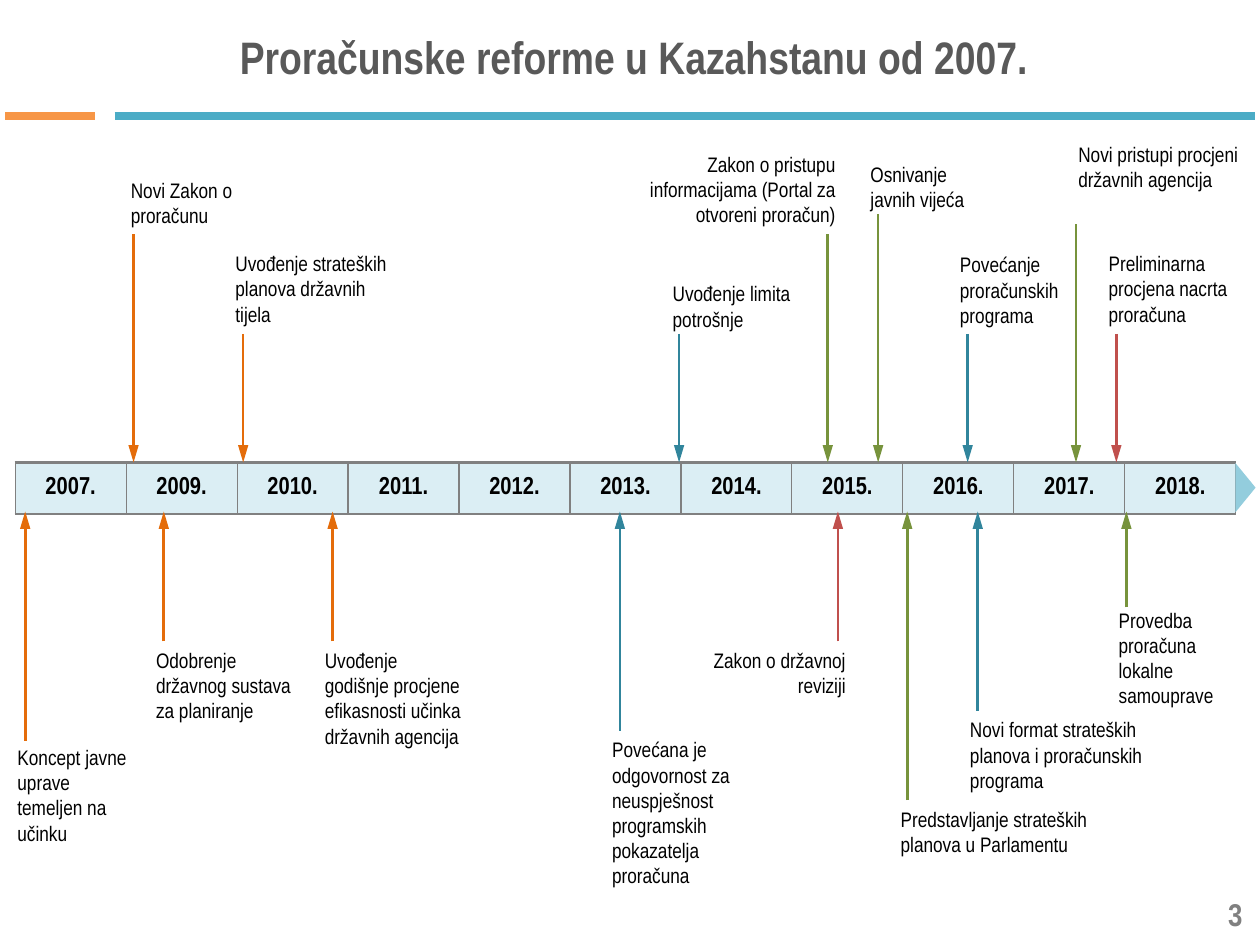
from lxml import etree
from pptx import Presentation
from pptx.dml.color import RGBColor
from pptx.enum.shapes import MSO_CONNECTOR, MSO_SHAPE
from pptx.enum.text import MSO_ANCHOR, PP_ALIGN
from pptx.oxml.ns import qn
from pptx.util import Inches, Pt

FONT = "Arial Narrow"
COLORS = {
    "title": "595959", "gray": "808080", "black": "000000",
    "rule": "4BACC6", "accent": "F79646", "cell": "DBEEF4", "tip": "93CDDD",
    "orange": "E46C0A", "teal": "31859C", "green": "77933C", "red": "C0504D",
}
YEARS = ["2007.", *(f"{year}." for year in range(2009, 2019))]
BAND = (0.12, 3.67, 9.69, 0.41)
ARROW_BOTTOM = 4.06

# Text, text box, arrow x, arrow start, colour (an arrow ends on the band)
EVENTS_ABOVE = [
    ("Novi Zakon o proračunu", (0.94, 1.36, 1.46, 0.5), 1.06, 1.86, "orange"),
    ("Uvođenje strateških planova državnih tijela", (1.77, 1.94, 1.42, 0.71), 1.93, 2.65, "orange"),
    ("Uvođenje limita potrošnje", (5.24, 2.18, 1.42, 0.55), 5.39, 2.65, "teal"),
    ("Zakon o pristupu informacijama (Portal za otvoreni proračun)",
     (5, 1.15, 1.73, 0.71), 6.57, 1.86, "green"),
    ("Osnivanje\njavnih vijeća", (6.81, 1.23, 1.18, 0.47), 6.97, 1.7, "green"),
    ("Povećanje proračunskih programa", (7.52, 1.95, 1.18, 0.7), 7.68, 2.65, "teal"),
    ("Novi pristupi procjeni državnih agencija", (8.46, 1.07, 1.54, 0.69), 8.54, 1.78, "green"),
    ("Preliminarna procjena nacrta proračuna", (8.7, 1.94, 1.18, 0.71), 8.86, 2.65, "red"),
]
EVENTS_BELOW = [
    ("Koncept javne uprave temeljen na učinku", (0.04, 5.86, 1.1, 0.96), 0.2, 5.88, "orange"),
    ("Odobrenje državnog sustava za planiranje", (1.14, 5.09, 1.34, 0.87), 1.3, 5.09, "orange"),
    ("Uvođenje\ngodišnje procjene efikasnosti učinka državnih agencija",
     (2.48, 5.09, 1.73, 0.94), 2.64, 5.09, "orange"),
    ("Povećana je odgovornost za neuspješnost programskih pokazatelja proračuna",
     (4.76, 5.8, 1.5, 1.1), 4.92, 5.8, "teal"),
    ("Zakon o državnoj reviziji", (5.39, 5.09, 1.42, 0.31), 6.65, 5.09, "red"),
    ("Predstavljanje strateških planova u Parlamentu", (7.05, 6.35, 1.73, 0.63), 7.2, 6.35, "green"),
    ("Novi format strateških planova i proračunskih programa",
     (7.6, 5.64, 1.73, 0.71), 7.76, 5.64, "teal"),
    ("Provedba proračuna lokalne samouprave", (8.78, 4.77, 1.22, 0.87), 8.94, 4.82, "green"),
]


def color(name):
    return RGBColor.from_string(COLORS[name])


def inches(box):
    return [Inches(length) for length in box]


def write(frame, text, size=12, bold=False, ink="black", align=PP_ALIGN.LEFT, after=0):
    for index, line in enumerate(text.split("\n")):
        para = frame.add_paragraph() if index else frame.paragraphs[0]
        para.alignment = align
        para.space_after = Pt(after)
        span = para.add_run()
        span.text = line
        span.font.name = FONT
        span.font.size = Pt(size)
        span.font.bold = bold
        span.font.color.rgb = color(ink)


def add_text(page, box, text, anchor=MSO_ANCHOR.TOP, **style):
    frame = page.shapes.add_textbox(*inches(box)).text_frame
    frame.word_wrap = True
    frame.vertical_anchor = anchor
    write(frame, text, **style)


def add_line(page, start, end, ink, width=1.5, arrow=False):
    line = page.shapes.add_connector(MSO_CONNECTOR.STRAIGHT, *inches(start + end))
    line.line.color.rgb = color(ink)
    line.line.width = Pt(width)
    if arrow:
        etree.SubElement(line.line._get_or_add_ln(), qn("a:tailEnd"), type="triangle", len="lg")
    etree.SubElement(line._element.spPr, qn("a:effectLst"))


def add_header(page, box):
    title = page.shapes.title
    title.left, title.top, title.width, title.height = inches(box)
    title.text_frame.vertical_anchor = MSO_ANCHOR.MIDDLE
    write(title.text_frame, "Proračunske reforme u Kazahstanu od 2007.", size=26,
          bold=True, ink="title", align=PP_ALIGN.CENTER, after=6)
    rule_y = box[1] + box[3] + 0.16
    add_line(page, (0.91, rule_y), (9.96, rule_y), "rule", width=4.5)
    add_line(page, (0.04, rule_y), (0.75, rule_y), "accent", width=4.5)


def set_borders(cell):
    properties = cell._tc.get_or_add_tcPr()
    for index, (side, width) in enumerate((("L", 0.75), ("R", 0.75), ("T", 1.5), ("B", 1.5))):
        border = etree.Element(qn(f"a:ln{side}"), w=str(Pt(width)))
        fill = etree.SubElement(border, qn("a:solidFill"))
        etree.SubElement(fill, qn("a:srgbClr"), val=COLORS["gray"])
        properties.insert(index, border)


def add_year_band(page, box):
    left, top, width, height = box
    table = page.shapes.add_table(1, len(YEARS), *inches(box)).table
    table.first_row = table.horz_banding = False
    table.rows[0].height = Inches(height)
    for index, year in enumerate(YEARS):
        table.columns[index].width = Inches(width / len(YEARS))
        cell = table.cell(0, index)
        cell.vertical_anchor = MSO_ANCHOR.MIDDLE
        cell.fill.solid()
        cell.fill.fore_color.rgb = color("cell")
        set_borders(cell)
        write(cell.text_frame, year, size=14, bold=True, align=PP_ALIGN.CENTER)

    # Arrow tip at the right end of the band
    tip = page.shapes.add_shape(MSO_SHAPE.ISOSCELES_TRIANGLE,
                                *inches((left + width - 0.12, top + 0.12, 0.39, 0.16)))
    tip.rotation = 90
    tip.shadow.inherit = False
    tip.fill.solid()
    tip.fill.fore_color.rgb = color("tip")
    tip.line.fill.background()


def add_events(page, events, band_y):
    for text, box, x, start_y, ink in events:
        add_line(page, (x, start_y), (x, band_y), ink, arrow=True)
        # Text that lies mostly left of its arrow is set flush right
        is_left = x > box[0] + box[2] / 2
        add_text(page, box, text, align=PP_ALIGN.RIGHT if is_left else PP_ALIGN.LEFT)


def main():
    deck = Presentation()
    deck.slide_width, deck.slide_height = Inches(10), Inches(7.5)
    page = deck.slides.add_slide(deck.slide_layouts[5])
    add_header(page, (0.35, 0.13, 9.37, 0.63))
    add_year_band(page, BAND)
    add_events(page, EVENTS_ABOVE, BAND[1])
    add_events(page, EVENTS_BELOW, ARROW_BOTTOM)
    # Page number
    add_text(page, (7.63, 7.05, 2.33, 0.4), "3", anchor=MSO_ANCHOR.MIDDLE,
             size=18, bold=True, ink="gray", align=PP_ALIGN.RIGHT)
    deck.save("out.pptx")


if __name__ == "__main__":
    main()
